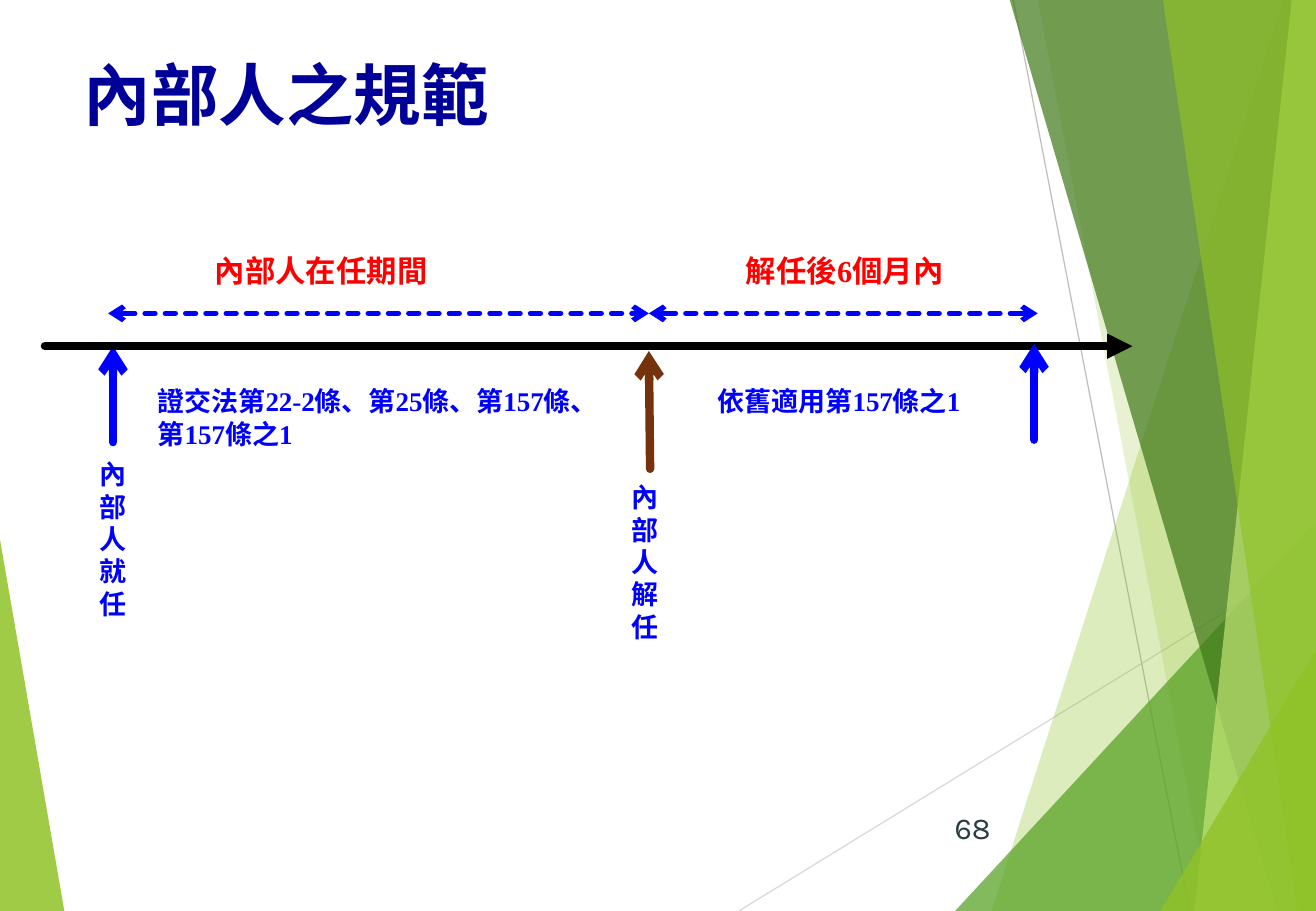
from dataclasses import dataclass

from lxml.etree import SubElement
from pptx import Presentation
from pptx.dml.color import RGBColor
from pptx.enum.dml import MSO_LINE
from pptx.enum.shapes import MSO_CONNECTOR
from pptx.enum.text import MSO_ANCHOR, PP_ALIGN
from pptx.oxml.ns import qn
from pptx.util import Emu, Inches, Pt

CELL = Inches(0.1)
COLS, ROWS = 108.3, 75
AXIS, SPAN = 28.5, 25.8
START, LEAVE, END = 9.3, 53.4, 85.1
BLUE, RED, NAVY, LIME = "0000FF", "FF0000", "000099", "90C226"
HAN, LATIN = "Noto Sans CJK SC", "Times New Roman"


@dataclass
class Facet:
    points: list[tuple[float, float]]
    color: str
    alpha: int


@dataclass
class Stroke:
    start: tuple[float, float]
    end: tuple[float, float]
    color: str
    width: float
    head: str = ""
    tail: str = ""
    dashed: bool = False


@dataclass
class Label:
    text: str
    box: tuple[float, float, float, float]
    size: int = 16
    color: str = BLUE
    font: str = LATIN
    bold: bool = True
    align: PP_ALIGN = PP_ALIGN.LEFT
    anchor: MSO_ANCHOR = MSO_ANCHOR.TOP


LEFT = [Facet([(0, 44.4), (5.3, ROWS), (0, ROWS)], LIME, 85)]
RAYS = [
    Stroke((60.8, ROWS), (COLS, 45.8), "D9D9D9", 0.75),
    Stroke((83.4, 0), (97.9, ROWS), "BFBFBF", 0.75),
]
RIGHT = [
    Facet([(105.6, 0), (81.6, ROWS), (COLS, ROWS), (COLS, 0)], LIME, 30),
    Facet([(85.4, 0), (99.6, ROWS), (COLS, ROWS), (COLS, 0)], LIME, 20),
    Facet([(78.6, ROWS), (COLS, 42.9), (COLS, ROWS)], "54A021", 72),
    Facet([(83.1, 0), (105.1, ROWS), (COLS, ROWS), (COLS, 0)], "3F7819", 70),
    Facet([(106.3, 0), (98.3, ROWS), (COLS, ROWS), (COLS, 0)], "C0E474", 70),
    Facet([(95.7, 0), (106.8, ROWS), (COLS, ROWS), (COLS, 0)], LIME, 65),
    Facet([(95.5, ROWS), (COLS, 53.5), (COLS, ROWS)], LIME, 80),
]
ARROWS = [
    Stroke((START, 36.4), (START, AXIS), BLUE, 5, tail="arrow"),
    Stroke((8.9, SPAN), (LEAVE, SPAN), BLUE, 3, "arrow", "arrow", True),
    Stroke((3.7, AXIS), (93.2, AXIS), "000000", 5, tail="triangle"),
    Stroke((END, 36.2), (END, 28.3), BLUE, 5, tail="arrow"),
    Stroke((53.5, 38.6), (LEAVE, 28.9), "74330C", 5, tail="arrow"),
    Stroke((LEAVE, SPAN), (85.4, SPAN), BLUE, 3, "arrow", "arrow", True),
]
TITLE = Label("內部人之規範", (5.9, 3.9, 103.4, 11.8), 40, NAVY, HAN)
LABELS = [
    Label("68", (76.4, 66.1, 6.1, 4), 18, "2C3C43", "Karla", False,
          PP_ALIGN.RIGHT, MSO_ANCHOR.MIDDLE),
    Label("內部人就任", (7.2, 37.2, 5.5, 14.5), font=HAN),
    Label("依舊適用第157條之1", (58.1, 31.2, 22.7, 3.7)),
    Label("證交法第22-2條、第25條、第157條、第157條之1", (12, 31.2, 37.5, 6.4)),
    Label("內部人解任", (51, 39.1, 5.5, 14.5), font=HAN),
    Label("解任後6個月內", (60.4, 20.3, 19.5, 4), 18, RED),
    Label("內部人在任期間", (16.7, 20.3, 22.7, 4), 18, RED),
]


def grid(*cells: float) -> list[Emu]:
    return [Emu(round(cell * CELL)) for cell in cells]


def paint(fill, color: str) -> None:
    fill.solid()
    fill.fore_color.rgb = RGBColor.from_string(color)


def draw_facet(slide, facet: Facet) -> None:
    first, *rest = [grid(*point) for point in facet.points]
    pen = slide.shapes.build_freeform(*first)
    pen.add_line_segments(rest)
    shape = pen.convert_to_shape()
    shape.shadow.inherit = False
    shape.line.fill.background()
    paint(shape.fill, facet.color)
    tint = next(shape.element.spPr.iter(qn("a:srgbClr")))
    SubElement(tint, qn("a:alpha"), val=str(facet.alpha * 1000))


def draw_stroke(slide, stroke: Stroke) -> None:
    link = slide.shapes.add_connector(
        MSO_CONNECTOR.STRAIGHT, *grid(*stroke.start, *stroke.end))
    line = link.line
    line.width = Pt(stroke.width)
    paint(line.fill, stroke.color)
    if stroke.dashed:
        line.dash_style = MSO_LINE.SQUARE_DOT
    props = link.element.spPr
    edge = props.find(qn("a:ln"))
    if stroke.tail:
        edge.set("cap", "rnd")
        SubElement(edge, qn("a:round"))
    for tag, kind in (("a:headEnd", stroke.head), ("a:tailEnd", stroke.tail)):
        if kind:
            SubElement(edge, qn(tag), type=kind)
    SubElement(props, qn("a:effectLst"))


def write(shape, label: Label) -> None:
    shape.left, shape.top, shape.width, shape.height = grid(*label.box)
    frame = shape.text_frame
    frame.word_wrap = True
    frame.vertical_anchor = label.anchor
    para = frame.paragraphs[0]
    para.alignment = label.align
    run = para.add_run()
    run.text = label.text
    font = run.font
    font.size, font.bold, font.name = Pt(label.size), label.bold, label.font
    paint(font.fill, label.color)
    SubElement(run._r.get_or_add_rPr(), qn("a:ea"), typeface=HAN)


def main() -> None:
    deck = Presentation()
    deck.slide_width, deck.slide_height = grid(COLS, ROWS)
    slide = deck.slides.add_slide(deck.slide_layouts[5])
    for facet in LEFT:
        draw_facet(slide, facet)
    for ray in RAYS:
        draw_stroke(slide, ray)
    for facet in RIGHT:
        draw_facet(slide, facet)
    write(slide.shapes.title, TITLE)
    for arrow in ARROWS:
        draw_stroke(slide, arrow)
    for label in LABELS:
        write(slide.shapes.add_textbox(*grid(*label.box)), label)
    deck.save("out.pptx")


if __name__ == "__main__":
    main()
